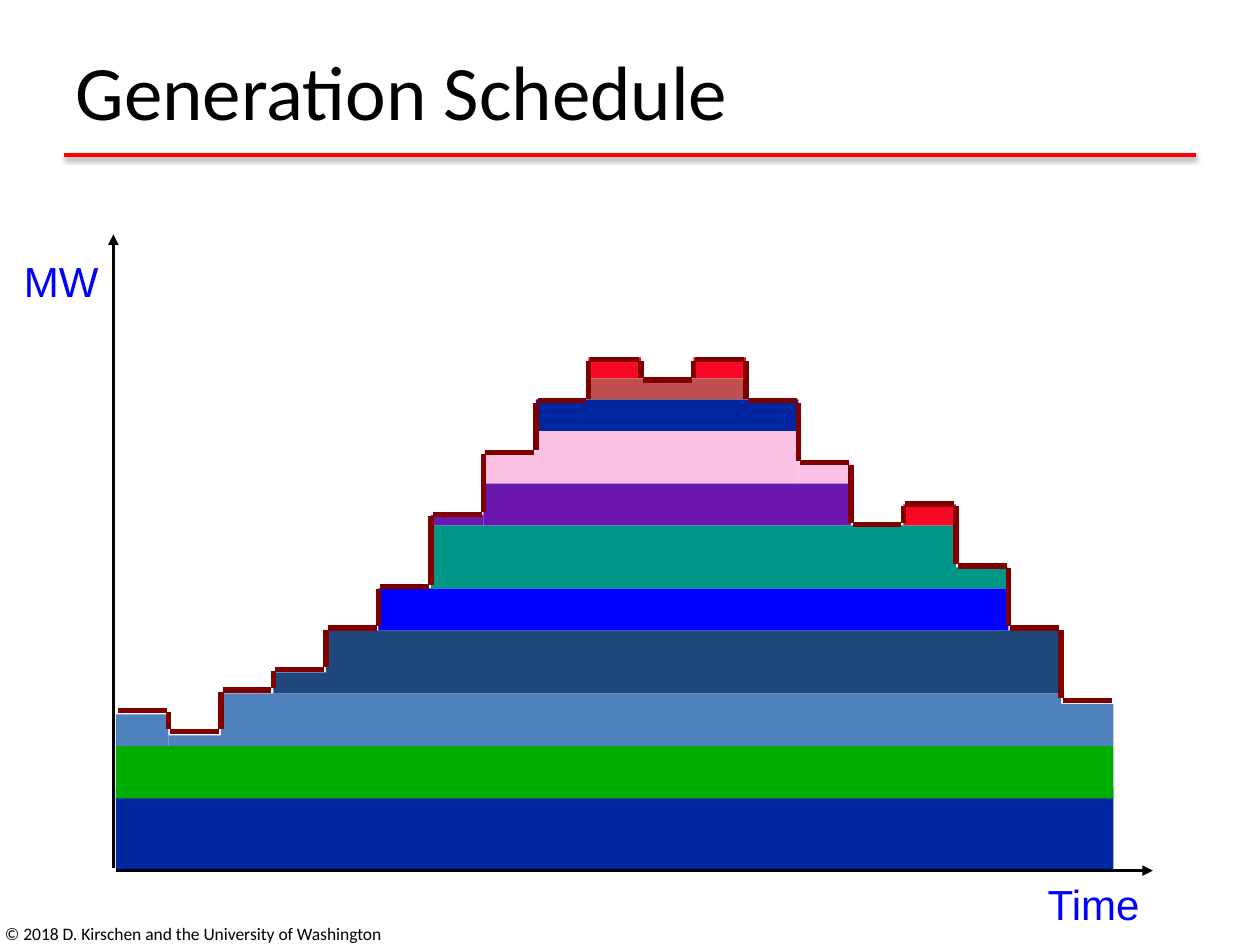
from lxml import etree
from pptx import Presentation
from pptx.dml.color import RGBColor
from pptx.enum.shapes import MSO_CONNECTOR, MSO_SHAPE
from pptx.enum.text import MSO_ANCHOR, MSO_AUTO_SIZE, PP_ALIGN
from pptx.oxml.ns import qn
from pptx.util import Inches, Pt

STRAIGHT = MSO_CONNECTOR.STRAIGHT
RECTANGLE = MSO_SHAPE.RECTANGLE
MIDDLE, TOP = MSO_ANCHOR.MIDDLE, MSO_ANCHOR.TOP
LEFT, CENTER = PP_ALIGN.LEFT, PP_ALIGN.CENTER

BLACK = RGBColor(0x00, 0x00, 0x00)
RED = RGBColor(0xFF, 0x00, 0x00)
BLUE = RGBColor(0x00, 0x00, 0xFF)
NAVY = RGBColor(0x00, 0x27, 0x9F)
GREEN = RGBColor(0x00, 0xAE, 0x00)
STEEL = RGBColor(0x4F, 0x81, 0xBD)
DARK_BLUE = RGBColor(0x1F, 0x49, 0x7D)
TEAL = RGBColor(0x00, 0x96, 0x88)
SCARLET = RGBColor(0xF8, 0x07, 0x27)
PURPLE = RGBColor(0x6C, 0x18, 0xB0)
PINK = RGBColor(0xFD, 0xC0, 0xE5)
BRICK = RGBColor(0xC0, 0x50, 0x4D)
MAROON = RGBColor(0x80, 0x00, 0x00)

TITLE = "Generation Schedule"
# text, left, top, width, height, size, font, colour, alignment, anchor, wrap
LABELS = [
    ("© 2018 D. Kirschen and the University of Washington",
     -0.06, 7.21, 3.88, 0.4, 10, "Calibri", BLACK, LEFT, MIDDLE, True),
    ("MW", 0.09, 1.98, 0.79, 0.5, 24, "Arial", BLUE, CENTER, TOP, False),
    ("Time", 8.21, 6.92, 0.94, 0.5, 24, "Arial", BLUE, CENTER, TOP, False),
]
AXES = [((0.9, 6.89), (0.9, 1.86)), ((0.92, 6.91), (9.15, 6.91))]

PERIODS = 19
# colour, bottom level, then (first period, periods, levels) for each block
BASE_UNITS = [
    (NAVY, 0, [(0, 19, 8)]),
    (GREEN, 7, [(0, 19, 5)]),
]
UNITS = [
    (STEEL, 12, [(0, 1, 3), (1, 1, 1), (2, 16, 5), (18, 1, 4)]),
    (DARK_BLUE, 17, [(4, 14, 6), (3, 1, 2)]),
    (BLUE, 23, [(5, 12, 4)]),
    (TEAL, 27, [(6, 10, 6), (16, 1, 2)]),
    (SCARLET, 47, [(9, 1, 2), (11, 1, 2)]),
    (SCARLET, 33, [(15, 1, 2)]),
    (PURPLE, 33, [(7, 7, 4), (6, 1, 1)]),
    (PINK, 37, [(8, 5, 5), (13, 1, 2), (7, 1, 3)]),
    (NAVY, 42, [(8, 5, 3)]),
    (BRICK, 45, [(9, 3, 2)]),
]

X0, BASE_Y = 0.92, 6.92
PERIOD_W = 5 / 12
LEVEL_H = 1 / 12
LOAD_BASE_Y, LOAD_LEVEL_H = 6.87, 0.082
GAP = 0.015


def add_line(shapes, start, end, color, width, arrow=False):
    line = shapes.add_connector(STRAIGHT, *(Inches(v) for v in (*start, *end)))
    line.line.color.rgb = color
    line.line.width = Pt(width)
    if arrow:
        ln = line.line._get_or_add_ln()
        etree.SubElement(ln, qn("a:tailEnd"), type="triangle")
    return etree.SubElement(line._element.spPr, qn("a:effectLst"))


def add_label(slide, text, left, top, width, height, size, font, color,
              align, anchor, wrap):
    box = slide.shapes.add_textbox(*map(Inches, (left, top, width, height)))
    tf = box.text_frame
    tf.word_wrap = wrap
    tf.vertical_anchor = anchor
    if not wrap:
        tf.auto_size = MSO_AUTO_SIZE.SHAPE_TO_FIT_TEXT
    p = tf.paragraphs[0]
    p.text = text
    p.alignment = align
    p.font.size, p.font.name, p.font.color.rgb = Pt(size), font, color


def add_title(slide):
    effects = add_line(slide.shapes, (0.51, 1.23), (9.49, 1.23), RED, 2)
    shadow = etree.SubElement(effects, qn("a:outerShdw"), blurRad=str(Pt(3.1)),
                              dist=str(Pt(1.6)), dir="5400000", rotWithShape="0")
    shade = etree.SubElement(shadow, qn("a:srgbClr"), val=str(BLACK))
    etree.SubElement(shade, qn("a:alpha"), val="38000")

    title = slide.shapes.title
    title.left, title.top = Inches(0.5), Inches(0.13)
    title.width, title.height = Inches(9), Inches(1.17)
    tf = title.text_frame
    tf.text = TITLE
    tf.vertical_anchor = MIDDLE
    p = tf.paragraphs[0]
    p.alignment = LEFT
    p.font.size, p.font.name, p.font.color.rgb = Pt(44), "Calibri", BLACK


def add_units(slide, units):
    for color, bottom, blocks in units:
        for first, periods, levels in blocks:
            sp = slide.shapes.add_shape(
                RECTANGLE,
                Inches(X0 + first * PERIOD_W),
                Inches(BASE_Y - (bottom + levels) * LEVEL_H),
                Inches(periods * PERIOD_W), Inches(levels * LEVEL_H))
            sp.shadow.inherit = False
            sp.fill.solid()
            sp.fill.fore_color.rgb = color
            sp.line.fill.background()


def load_levels():
    """Return the top level of the stacked units in each period."""
    load = [0] * PERIODS
    for _, bottom, blocks in BASE_UNITS + UNITS:
        for first, periods, levels in blocks:
            for i in range(first, first + periods):
                load[i] = max(load[i], bottom + levels)
    return load


def add_load_outline(slide):
    shapes = slide.shapes.add_group_shape().shapes
    xs = [X0 + i * PERIOD_W for i in range(PERIODS)]
    ys = [LOAD_BASE_Y - level * LOAD_LEVEL_H for level in load_levels()]
    for x, y in zip(xs, ys):
        add_line(shapes, (x + GAP, y), (x + PERIOD_W - GAP, y), MAROON, 3)
    for x, before, after in zip(xs[1:], ys, ys[1:]):
        upper, lower = sorted((before, after))
        add_line(shapes, (x, upper + GAP), (x, lower - GAP), MAROON, 3)


def main():
    prs = Presentation()
    prs.slide_width, prs.slide_height = Inches(10), Inches(7.5)
    slide = prs.slides.add_slide(prs.slide_layouts[5])

    add_title(slide)
    for label in LABELS:
        add_label(slide, *label)
    add_units(slide, BASE_UNITS)
    axes = slide.shapes.add_group_shape().shapes
    for start, end in AXES:
        add_line(axes, start, end, BLACK, 2, arrow=True)
    add_units(slide, UNITS)
    add_load_outline(slide)

    prs.save("out.pptx")


if __name__ == "__main__":
    main()
